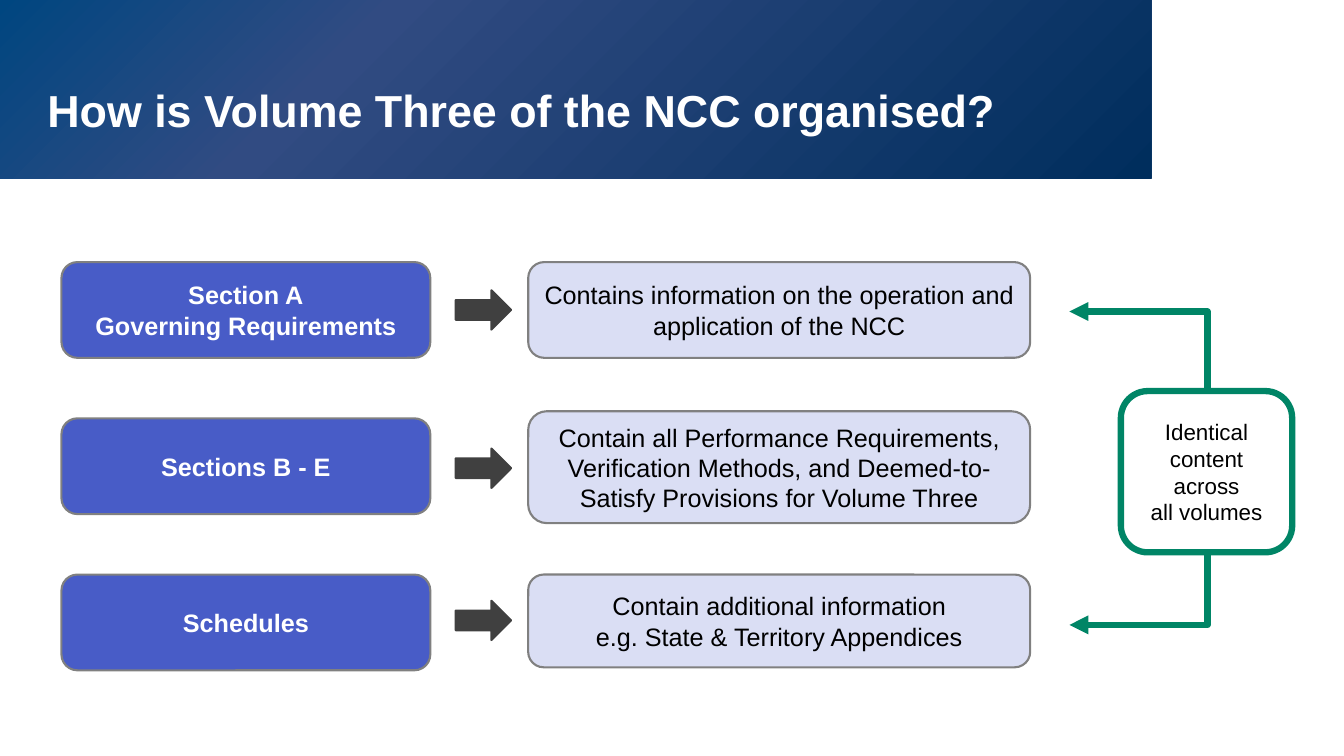
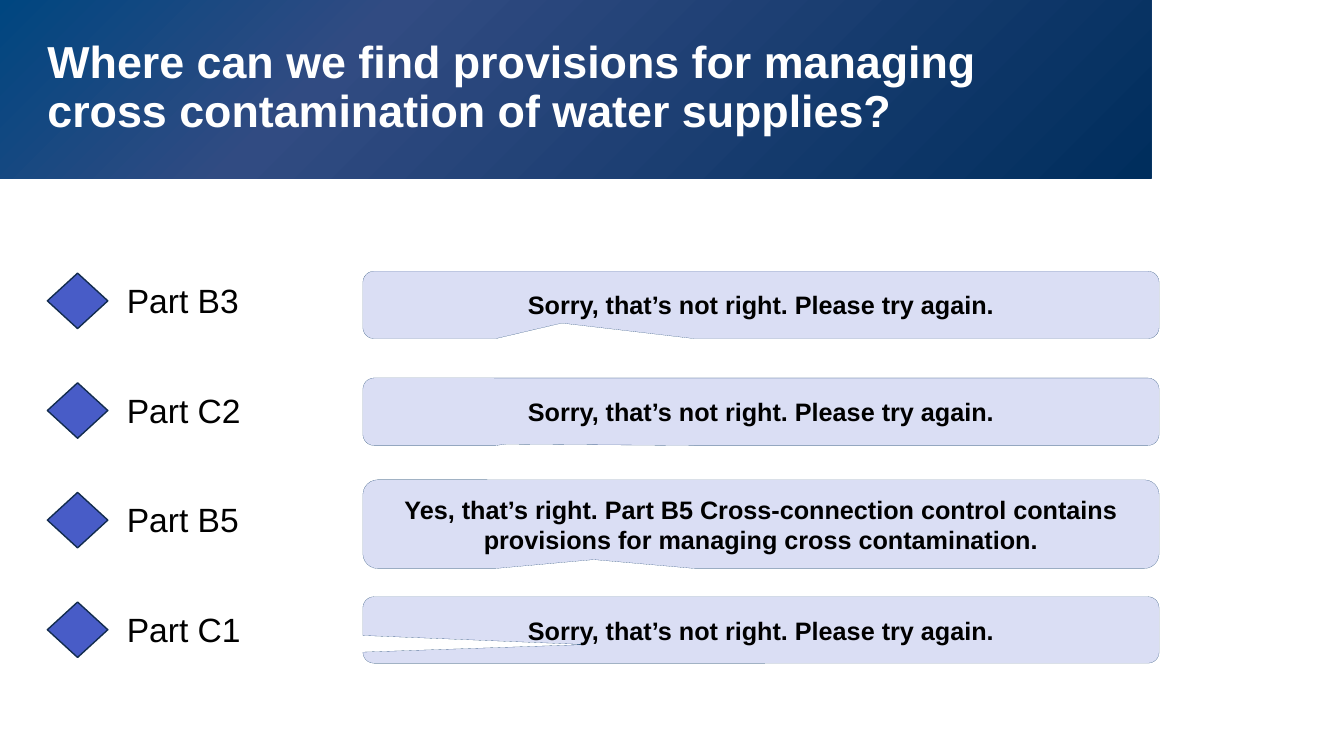
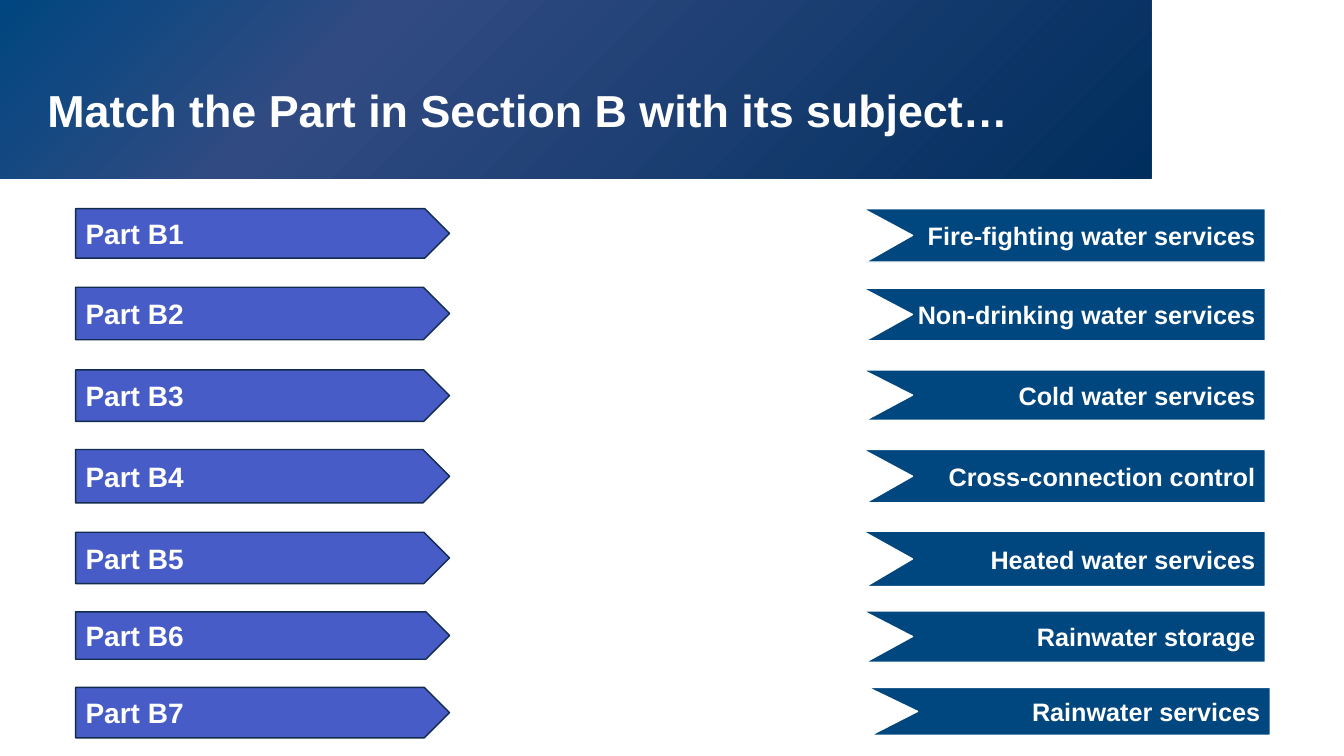
from copy import deepcopy
from dataclasses import dataclass

from pptx import Presentation
from pptx.dml.color import RGBColor
from pptx.enum.shapes import MSO_CONNECTOR, MSO_SHAPE
from pptx.enum.text import MSO_ANCHOR, MSO_AUTO_SIZE, PP_ALIGN
from pptx.oxml.ns import qn
from pptx.util import Pt
from lxml import etree

ROUNDED, RIGHT_ARROW = MSO_SHAPE.ROUNDED_RECTANGLE, MSO_SHAPE.RIGHT_ARROW
RECT, DIAMOND = MSO_SHAPE.RECTANGLE, MSO_SHAPE.DIAMOND
CALLOUT, PENTAGON = MSO_SHAPE.ROUNDED_RECTANGULAR_CALLOUT, MSO_SHAPE.PENTAGON
ELBOW = MSO_CONNECTOR.ELBOW
LEFT, CENTER, RIGHT = PP_ALIGN.LEFT, PP_ALIGN.CENTER, PP_ALIGN.RIGHT
TOP, MIDDLE, BOTTOM = MSO_ANCHOR.TOP, MSO_ANCHOR.MIDDLE, MSO_ANCHOR.BOTTOM
NO_FIT = MSO_AUTO_SIZE.NONE
TITLE_ONLY = 5


@dataclass(frozen=True)
class Theme:
    font: str = "Arial"
    white: str = "FFFFFF"
    black: str = "000000"
    indigo: str = "485CC7"
    lavender: str = "DADEF4"
    grey: str = "808080"
    charcoal: str = "404040"
    green: str = "008566"
    navy: str = "002E5D"
    outline: str = "122C4E"
    blue: str = "00467F"
    band: tuple = ((0, "004680"), (0.3, "314B82"), (1, "002E5D"))
    title_size: int = 32
    label_size: int = 24
    tag_size: int = 20
    body_size: int = 18
    note_size: int = 16


THEME = Theme()


def rgb(code):
    return RGBColor.from_string(code)


def write(tf, text, size=THEME.body_size, color=THEME.black, bold=False,
          align=LEFT, anchor=MIDDLE):
    """Fill a text frame; newline starts a paragraph, vertical tab a line."""
    tf.text = text
    tf.word_wrap = True
    tf.vertical_anchor = anchor
    for p in tf.paragraphs:
        p.alignment = align
        for r in p.runs:
            r.font.name = THEME.font
            r.font.size = Pt(size)
            r.font.bold = bold
            r.font.color.rgb = rgb(color)


class Deck:
    def __init__(self, width, height):
        self.prs = Presentation()
        self.prs.slide_width, self.prs.slide_height = Pt(width), Pt(height)
        self.layout = self.prs.slide_layouts[TITLE_ONLY]
        self.slide = None

    def new_slide(self, title):
        first = self.slide is None
        self.slide = self.prs.slides.add_slide(self.layout)
        if first:
            self.add_band_to_layout()
        sp = self.slide.shapes.title
        sp.left, sp.top, sp.width, sp.height = map(Pt, (26.64, 24.48, 737.28, 77.04))
        tf = sp.text_frame
        write(tf, title, THEME.title_size, THEME.white, True, anchor=BOTTOM)
        tf.auto_size = NO_FIT
        p = tf.paragraphs[0]
        p.line_spacing = 0.9
        p.space_after = Pt(2)

    def add_band_to_layout(self):
        """Draw the gradient band and move it behind the layout's title."""
        band = self.shape(RECT, 0, 0, 822.24, 127.44, THEME.navy)
        band.fill.gradient()
        band.fill.gradient_angle = 315
        stops = band._element.spPr.find(".//" + qn("a:gsLst"))
        stops.append(deepcopy(stops[0]))
        for stop, (position, color) in zip(band.fill.gradient_stops, THEME.band):
            stop.position = position
            stop.color.rgb = rgb(color)
        self.layout.shapes._spTree.insert(2, band._element)

    def paint(self, sp, fill, line=None, line_width=1.0):
        sp.shadow.inherit = False
        sp.fill.solid()
        sp.fill.fore_color.rgb = rgb(fill)
        if line:
            sp.line.color.rgb = rgb(line)
            sp.line.width = Pt(line_width)
        else:
            sp.line.fill.background()

    def shape(self, kind, x, y, w, h, fill, line=None, line_width=1.0,
              text="", adjust=(), **text_format):
        sp = self.slide.shapes.add_shape(kind, Pt(x), Pt(y), Pt(w), Pt(h))
        self.paint(sp, fill, line, line_width)
        for i, value in enumerate(adjust):
            sp.adjustments[i] = value
        if text:
            write(sp.text_frame, text, **text_format)
        return sp

    def outline(self, points, fill, line, text, **text_format):
        """Draw a closed polygon with text."""
        start, *rest = [(Pt(x), Pt(y)) for x, y in points]
        builder = self.slide.shapes.build_freeform(*start)
        builder.add_line_segments(rest, close=True)
        sp = builder.convert_to_shape()
        self.paint(sp, fill, line)
        write(sp.text_frame, text, **text_format)

    def label(self, x, y, w, h, text, **text_format):
        sp = self.slide.shapes.add_textbox(Pt(x), Pt(y), Pt(w), Pt(h))
        write(sp.text_frame, text, **text_format)

    def elbow_arrow(self, tip, foot, color, width):
        """Draw a one-bend line, level at the tip and upright at the foot."""
        ends = [Pt(v) for v in (*tip, *foot)]
        cxn = self.slide.shapes.add_connector(ELBOW, *ends)
        cxn.line.color.rgb = rgb(color)
        cxn.line.width = Pt(width)
        sp_pr = cxn._element.spPr
        sp_pr.find(qn("a:prstGeom")).set("prst", "bentConnector2")
        etree.SubElement(sp_pr.find(qn("a:ln")), qn("a:headEnd"), type="triangle")
        etree.SubElement(sp_pr, qn("a:effectLst"))


def organisation_slide(deck):
    deck.new_slide("How is Volume Three of the NCC organised?")
    # section, description, description top and height, arrow top
    rows = [
        ("Section A\nGoverning Requirements",
         "Contains information on the operation and application of the NCC",
         187.2, 68.4, 207.36),
        ("Sections B - E",
         "Contain all Performance Requirements, Verification Methods, and "
         "Deemed-to-Satisfy Provisions for Volume Three",
         293.76, 79.92, 320.4),
        ("Schedules",
         "Contain additional information\ve.g. State & Territory Appendices",
         410.4, 66.24, 429.12),
    ]
    for i, (section, description, top, height, arrow_top) in enumerate(rows):
        deck.shape(ROUNDED, 43.92, 187.2 + 111.6 * i, 263.52, 68.4, THEME.indigo,
                   THEME.grey, 1.5, section, color=THEME.white, bold=True,
                   align=CENTER)
        deck.shape(RIGHT_ARROW, 325.44, arrow_top, 39.6, 28.08, THEME.charcoal,
                   THEME.charcoal, 1.5)
        deck.shape(ROUNDED, 377.28, top, 358.56, height, THEME.lavender,
                   THEME.grey, 1.5, description, align=CENTER)
    deck.shape(ROUNDED, 800.64, 279.36, 122.4, 115.2, THEME.white, THEME.green, 4.5,
               "Identical content across\vall volumes", size=THEME.note_size,
               align=CENTER)
    for tip_y, foot_y in ((222.48, 279.36), (446.4, 394.56)):
        deck.elbow_arrow((763.92, tip_y), (862.56, foot_y), THEME.green, 4.5)


def question_slide(deck):
    deck.new_slide("Where can we find provisions for managing cross "
                   "contamination of water supplies?")
    wrong = "Sorry, that’s not right. Please try again."
    right = ("Yes, that’s right. Part B5 Cross-connection control contains "
             "provisions for managing cross contamination.")
    # part, reply, reply top and height, callout pointer
    answers = [
        ("Part B3", wrong, 193.68, 48.24, (-0.25, 0.27)),
        ("Part C2", wrong, 270, 48.24, (-0.32, 0.48)),
        ("Part B5", right, 342.72, 63.36, (-0.21, 0.4)),
        ("Part C1", wrong, 426.24, 47.52, (-0.22, 0.22)),
    ]
    for i, (part, reply, top, height, pointer) in enumerate(answers):
        y = 195.12 + 78.3 * i
        deck.label(83.52, y + 1.44, 780.48, 36, part, size=THEME.label_size,
                   anchor=TOP)
        deck.shape(DIAMOND, 33.84, y, 43.2, 39.6, THEME.indigo, THEME.outline)
        deck.shape(CALLOUT, 259.2, top, 568.8, height, THEME.lavender, THEME.navy,
                   0.05, reply, pointer, bold=True, align=CENTER)


def matching_slide(deck):
    deck.new_slide("Match the Part in Section B with its subject…")
    # part top and height, subject left, top and height, subject
    rows = [
        (149.04, 35.28, 616.32, 149.04, 38.16, "Fire-fighting water services"),
        (205.2, 37.44, 616.32, 205.92, 37.44, "Non-drinking water services"),
        (264.24, 36.72, 616.32, 264.24, 36, "Cold water services"),
        (321.12, 38.16, 616.32, 321.12, 38.16, "Cross-connection control"),
        (380.16, 36.72, 616.32, 379.44, 39.6, "Heated water services"),
        (437.04, 33.84, 616.32, 436.32, 36.72, "Rainwater storage"),
        (491.04, 36, 619.92, 491.04, 34.2, "Rainwater services"),
    ]
    for n, (part_top, part_height, x, y, h, subject) in enumerate(rows, 1):
        deck.shape(PENTAGON, 54, part_top, 267.12, part_height, THEME.indigo,
                   THEME.outline, text=f"Part B{n}", size=THEME.tag_size,
                   color=THEME.white, bold=True)
        ribbon = [(x, y), (x + 287.5, y), (x + 287.5, y + h), (x + 2, y + h),
                  (x + 35.5, y + h / 2)]
        deck.outline(ribbon, THEME.blue, THEME.white, subject, color=THEME.white,
                     bold=True, align=RIGHT)


def main():
    deck = Deck(960, 540)
    organisation_slide(deck)
    question_slide(deck)
    matching_slide(deck)
    deck.prs.save("out.pptx")


if __name__ == "__main__":
    main()
